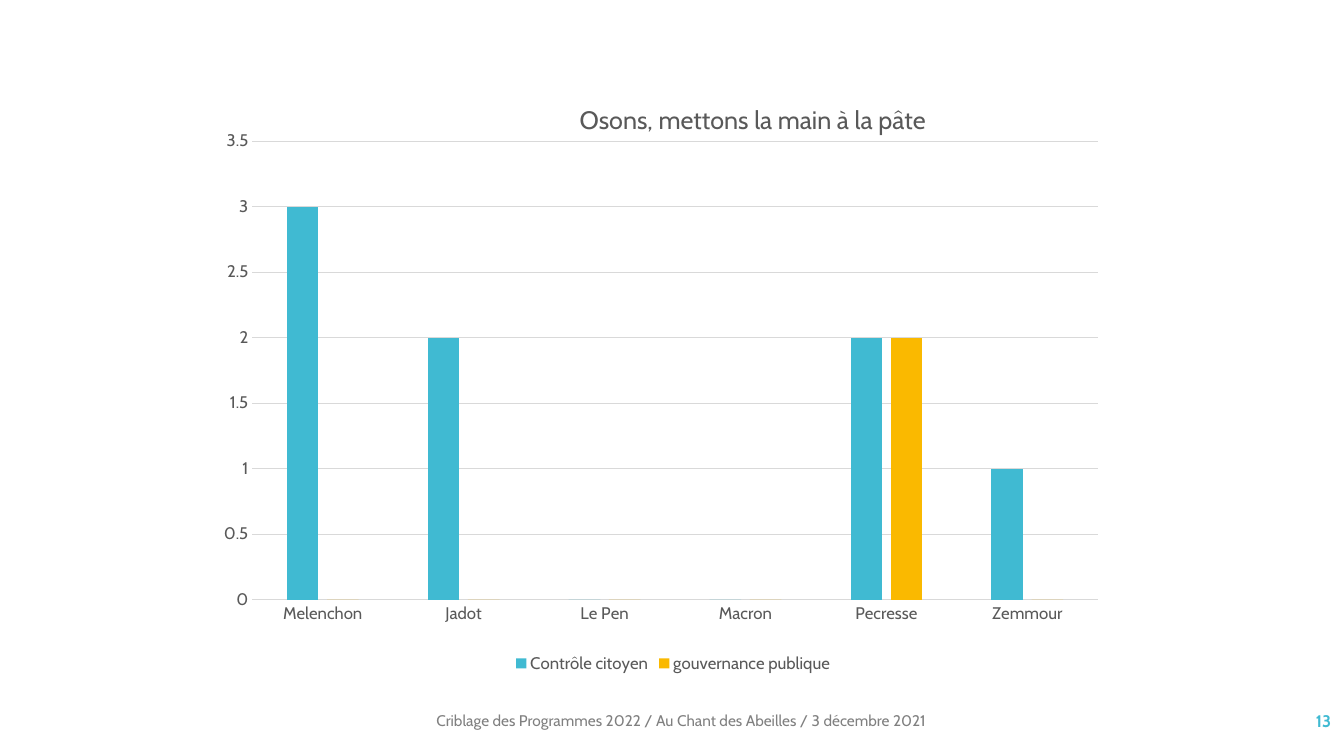
from lxml import etree
from pptx import Presentation
from pptx.chart.data import CategoryChartData
from pptx.dml.color import RGBColor
from pptx.enum.chart import XL_CHART_TYPE, XL_LEGEND_POSITION, XL_TICK_MARK
from pptx.enum.text import MSO_ANCHOR, PP_ALIGN
from pptx.oxml.ns import qn
from pptx.util import Inches, Pt

COLUMNS = XL_CHART_TYPE.COLUMN_CLUSTERED
BOTTOM = XL_LEGEND_POSITION.BOTTOM
NO_TICK = XL_TICK_MARK.NONE
MIDDLE = MSO_ANCHOR.MIDDLE
LEFT, RIGHT = PP_ALIGN.LEFT, PP_ALIGN.RIGHT

FONT = "Cabin"
COLORS = {
    "teal": "40BAD2",
    "amber": "FAB900",
    "text": "595959",
    "grid": "D9D9D9",
    "footer": "808080",
}
CANDIDATES = ["Melenchon", "Jadot", "Le Pen", "Macron", "Pecresse", "Zemmour"]
SERIES = [
    ("Contrôle citoyen", [3, 2, 0, 0, 2, 1], "teal"),
    ("gouvernance publique", [0, 0, 0, 0, 2, 0], "amber"),
]


def color(name):
    return RGBColor.from_string(COLORS[name])


def style_font(font, size, color_name, bold=False):
    font.name = FONT
    font.size = Pt(size)
    font.bold = bold
    font.color.rgb = color(color_name)


def style_line(line, color_name):
    line.color.rgb = color(color_name)
    line.width = Pt(0.75)


def set_layout(element, index, settings):
    for old in element.findall(qn("c:layout")):
        element.remove(old)
    layout = etree.Element(qn("c:layout"))
    manual = etree.SubElement(layout, qn("c:manualLayout"))
    for tag, value in settings.items():
        etree.SubElement(manual, qn(f"c:{tag}")).set("val", str(value))
    element.insert(index, layout)


def add_title(chart):
    chart.has_title = True
    title = chart.chart_title
    span = title.text_frame.paragraphs[0].add_run()
    span.text = "Osons, mettons la main à la pâte"
    style_font(span.font, 18, "text")
    title.include_in_layout = False
    set_layout(title.element, 1, {"xMode": "edge", "yMode": "edge", "x": 0.39, "y": 0.03})


def add_score_chart(page, left, top, width, height):
    data = CategoryChartData()
    data.categories = CANDIDATES
    for name, values, _ in SERIES:
        data.add_series(name, values)
    frame = page.shapes.add_chart(
        COLUMNS, Inches(left), Inches(top), Inches(width), Inches(height), data)
    chart = frame.chart
    style_font(chart.font, 12, "text")
    add_title(chart)

    plot = chart.plots[0]
    plot.gap_width = 219
    plot.overlap = -27
    plot.vary_by_categories = False
    for series, (_, _, color_name) in zip(plot.series, SERIES):
        series.format.fill.solid()
        series.format.fill.fore_color.rgb = color(color_name)
        series.invert_if_negative = False

    for axis in (chart.category_axis, chart.value_axis):
        axis.major_tick_mark = NO_TICK
        axis.minor_tick_mark = NO_TICK
        style_font(axis.tick_labels.font, 12, "text")
    style_line(chart.category_axis.format.line, "grid")
    scores = chart.value_axis
    scores.minimum_scale, scores.maximum_scale, scores.major_unit = 0, 3.5, 0.5
    scores.format.line.fill.background()
    style_line(scores.major_gridlines.format.line, "grid")

    chart.has_legend = True
    chart.legend.position = BOTTOM
    chart.legend.include_in_layout = False
    style_font(chart.legend.font, 12, "text")

    plot_area = chart.element.find(qn("c:chart")).find(qn("c:plotArea"))
    set_layout(plot_area, 0, {
        "layoutTarget": "inner", "xMode": "edge", "yMode": "edge",
        "x": 0.03, "y": 0.1, "w": 0.95, "h": 0.77,
    } | {"x": 0.029, "y": 0.103, "w": 0.946, "h": 0.767})


def add_label(page, left, top, width, height, text, size, color_name,
              bold=False, align=LEFT):
    box = page.shapes.add_textbox(Inches(left), Inches(top), Inches(width), Inches(height))
    frame = box.text_frame
    frame.word_wrap = True
    frame.vertical_anchor = MIDDLE
    para = frame.paragraphs[0]
    para.alignment = align
    span = para.add_run()
    span.text = text
    style_font(span.font, size, color_name, bold)


def add_footer(page, left, top, width, height):
    add_label(page, left, top, 6.46, height,
              "Criblage des Programmes 2022 / Au Chant des Abeilles / 3 décembre 2021",
              11, "footer")
    number_width = 1.67
    add_label(page, left + width - number_width, top, number_width, height,
              "13", 12, "teal", True, RIGHT)


def main():
    deck = Presentation()
    deck.slide_width, deck.slide_height = Inches(13.33), Inches(7.5)
    page = deck.slides.add_slide(deck.slide_layouts[6])
    add_footer(page, 4.23, 6.95, 9.07, 0.4)
    add_score_chart(page, 2.22, 0.79, 8.89, 5.93)
    deck.save("out.pptx")


if __name__ == "__main__":
    main()
